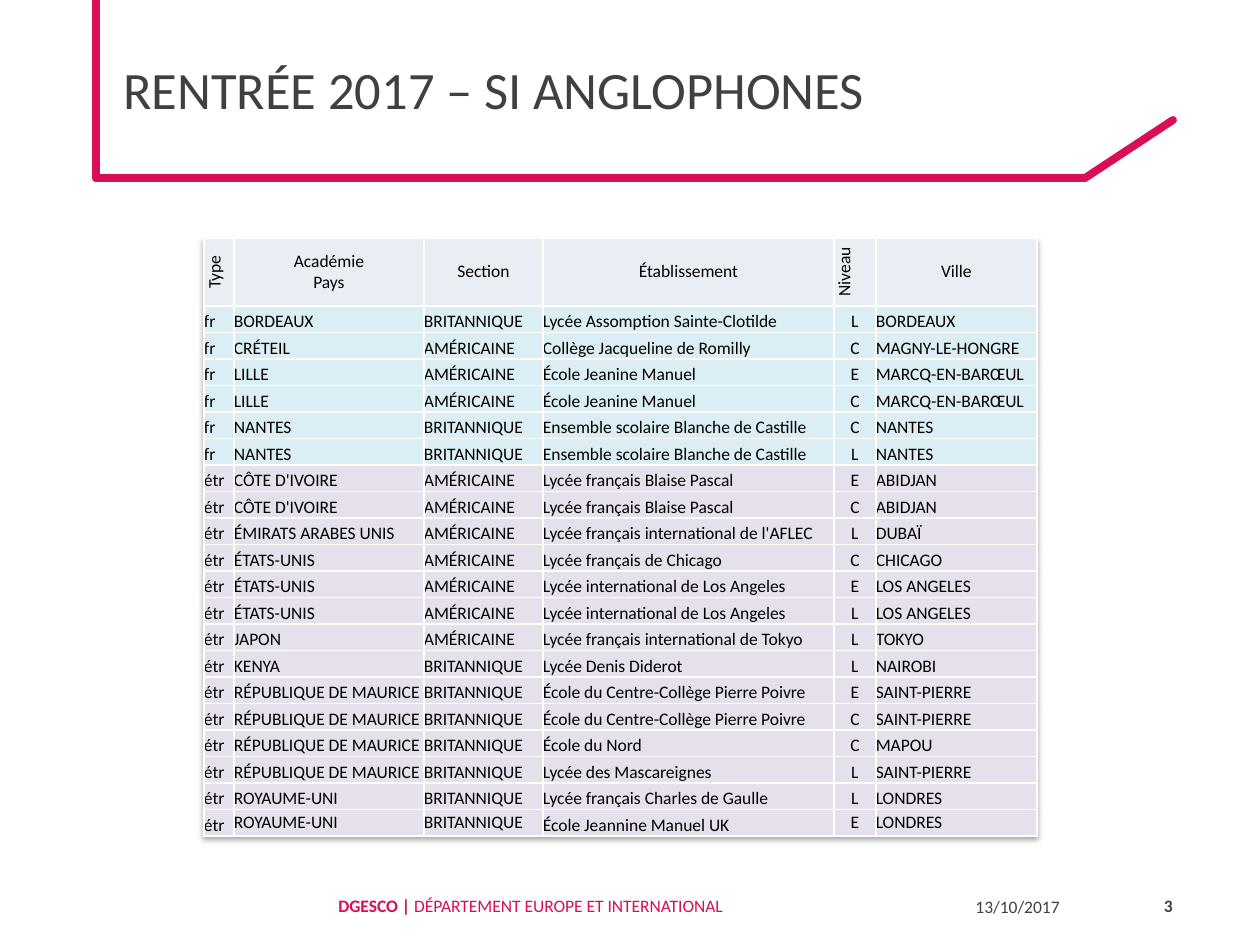
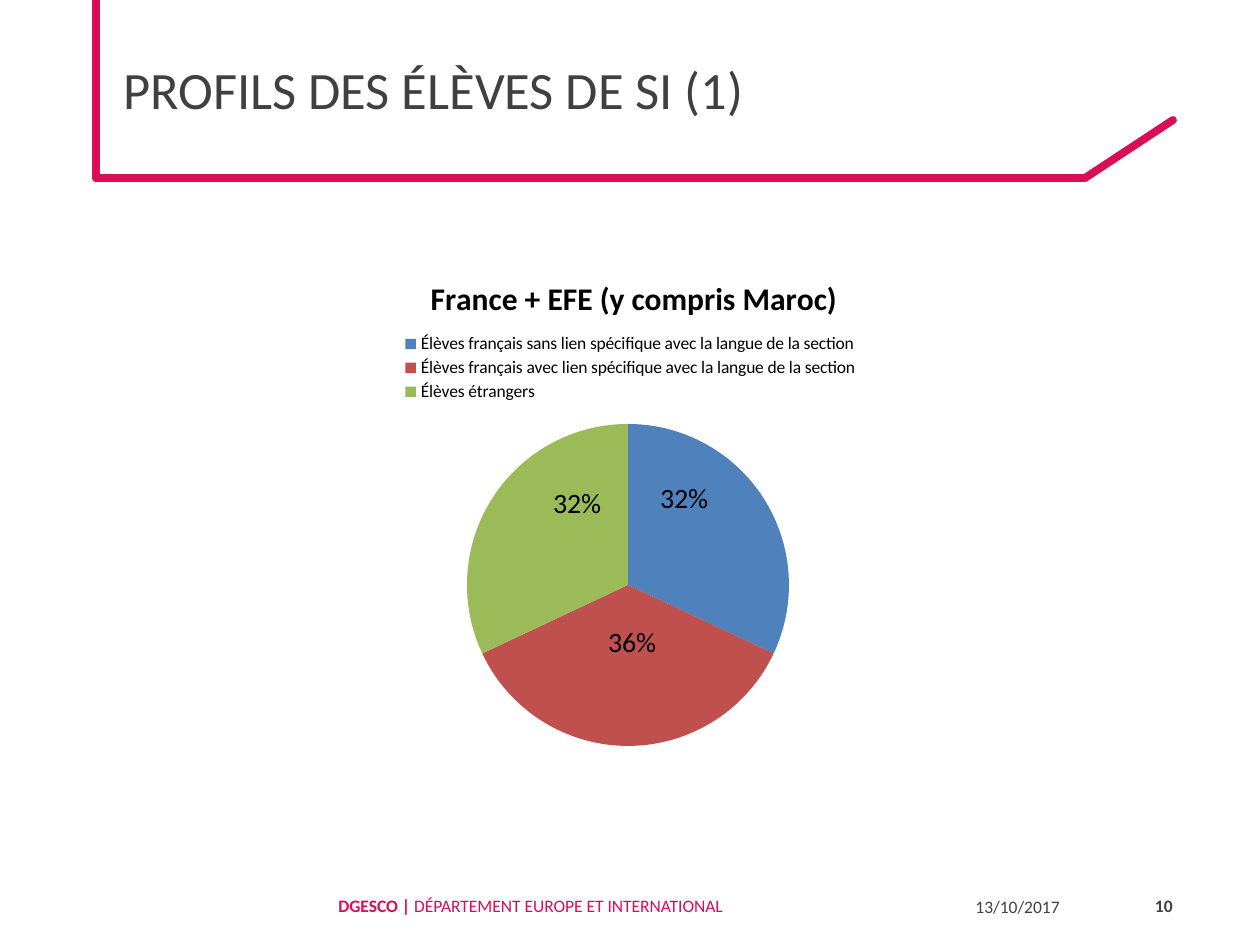
"""Builds two slides on international sections: a table of schools and a pie of pupil profiles."""
from lxml import etree
from pptx import Presentation, util as u
from pptx.chart.data import CategoryChartData
from pptx.dml.color import RGBColor
from pptx.enum import chart as charts, shapes, text
from pptx.oxml import parse_xml
from pptx.oxml.ns import nsdecls, qn

PINK = RGBColor(0xDA, 0x0D, 0x57)
GREY = RGBColor(0x40, 0x40, 0x40)
BLACK = RGBColor(0, 0, 0)
HEADER_FILL = RGBColor(0xE9, 0xED, 0xF4)
TYPE_FILLS = {"fr": RGBColor(0xDB, 0xEE, 0xF4), "étr": RGBColor(0xE6, 0xE0, 0xEC)}
BLUE = RGBColor(0x4F, 0x81, 0xBD)
RED = RGBColor(0xC0, 0x50, 0x4D)
GREEN = RGBColor(0x9B, 0xBB, 0x59)
FONT = "Calibri"
MIDDLE, BOTTOM = text.MSO_ANCHOR.MIDDLE, text.MSO_ANCHOR.BOTTOM
LEFT, CENTER, RIGHT = text.PP_ALIGN.LEFT, text.PP_ALIGN.CENTER, text.PP_ALIGN.RIGHT

FRAME_LINES = [(96, 178, 1085, 178), (1085, 178, 1173, 120), (96, 178, 96, 0)]
DEPARTMENT = ("DGESCO | ", "DÉPARTEMENT EUROPE ET INTERNATIONAL")
DATE = "13/10/2017"
TITLE_BOX = (111, 0, 1086, 178)
DEPARTMENT_BOX = (326, 858, 636, 93)
DATE_BOX = (963, 881, 160, 50)
NUMBER_BOX = (1123, 881, 62, 50)

COLUMNS = [("Type", 30), ("Académie\nPays", 190), ("Section", 119),
           ("Établissement", 291), ("Niveau", 42), ("Ville", 161)]
UPRIGHT = {"Type", "Niveau"}
UK, US = "BRITANNIQUE", "AMÉRICAINE"
SCHOOLS = [
    ("fr", "BORDEAUX", UK, "Lycée Assomption Sainte-Clotilde", "L", "BORDEAUX"),
    ("fr", "CRÉTEIL", US, "Collège Jacqueline de Romilly", "C", "MAGNY-LE-HONGRE"),
    ("fr", "LILLE", US, "École Jeanine Manuel", "E", "MARCQ-EN-BARŒUL"),
    ("fr", "LILLE", US, "École Jeanine Manuel", "C", "MARCQ-EN-BARŒUL"),
    ("fr", "NANTES", UK, "Ensemble scolaire Blanche de Castille", "C", "NANTES"),
    ("fr", "NANTES", UK, "Ensemble scolaire Blanche de Castille", "L", "NANTES"),
    ("étr", "CÔTE D'IVOIRE", US, "Lycée français Blaise Pascal", "E", "ABIDJAN"),
    ("étr", "CÔTE D'IVOIRE", US, "Lycée français Blaise Pascal", "C", "ABIDJAN"),
    ("étr", "ÉMIRATS ARABES UNIS", US, "Lycée français international de l'AFLEC", "L", "DUBAÏ"),
    ("étr", "ÉTATS-UNIS", US, "Lycée français de Chicago", "C", "CHICAGO"),
    ("étr", "ÉTATS-UNIS", US, "Lycée international de Los Angeles", "E", "LOS ANGELES"),
    ("étr", "ÉTATS-UNIS", US, "Lycée international de Los Angeles", "L", "LOS ANGELES"),
    ("étr", "JAPON", US, "Lycée français international de Tokyo", "L", "TOKYO"),
    ("étr", "KENYA", UK, "Lycée Denis Diderot", "L", "NAIROBI"),
    ("étr", "RÉPUBLIQUE DE MAURICE", UK, "École du Centre-Collège Pierre Poivre", "E", "SAINT-PIERRE"),
    ("étr", "RÉPUBLIQUE DE MAURICE", UK, "École du Centre-Collège Pierre Poivre", "C", "SAINT-PIERRE"),
    ("étr", "RÉPUBLIQUE DE MAURICE", UK, "École du Nord", "C", "MAPOU"),
    ("étr", "RÉPUBLIQUE DE MAURICE", UK, "Lycée des Mascareignes", "L", "SAINT-PIERRE"),
    ("étr", "ROYAUME-UNI", UK, "Lycée français Charles de Gaulle", "L", "LONDRES"),
    ("étr", "ROYAUME-UNI", UK, "École Jeannine Manuel UK", "E", "LONDRES"),
]
SCHOOLS_AT = (204, 238)
HEADER_HEIGHT, BODY_HEIGHT = 68, 530

PROFILES_TITLE = "France + EFE (y compris Maroc)"
PROFILES = [
    ("Élèves français sans lien spécifique avec la langue de la section", 32, BLUE, (-12, -43)),
    ("Élèves français avec lien spécifique avec la langue de la section", 36, RED, (4, -22)),
    ("Élèves étrangers", 32, GREEN, (17, -37)),
]
PROFILES_BOX = (204, 244, 849, 561)
PIE_BOX = (263, 180, 322, 322)
LEGEND_BOX = (195, 86, 462, 76)
PROFILES_TITLE_AT = (221, 27)


def px(length):
    return round(length * 914400 / 126)


def write(paragraph, content, size=10, color=BLACK, bold=False, align=LEFT, spacing=None):
    paragraph.alignment = align
    if spacing:
        paragraph.line_spacing = u.Pt(spacing)
    for index, line in enumerate(content.split("\n")):
        if index:
            paragraph.add_line_break()
        run = paragraph.add_run()
        run.text = line
        run.font.name, run.font.size, run.font.bold = FONT, u.Pt(size), bold
        run.font.color.rgb = color


def add_box(slide, box):
    frame = slide.shapes.add_textbox(*map(px, box)).text_frame
    frame.word_wrap = True
    frame.vertical_anchor = MIDDLE
    return frame.paragraphs[0]


def add_page(deck, title, number):
    slide = deck.slides.add_slide(deck.slide_layouts[6])
    for ends in FRAME_LINES:
        line = slide.shapes.add_connector(shapes.MSO_CONNECTOR.STRAIGHT, *map(px, ends))
        line.line.color.rgb = PINK
        line.line.width = u.Pt(4.5)
        properties = line.element.xpath("p:spPr")[0]
        properties.find(qn("a:ln")).set("cap", "rnd")
        etree.SubElement(properties, qn("a:effectLst"))
    department = add_box(slide, DEPARTMENT_BOX)
    for part, bold in zip(DEPARTMENT, (True, False)):
        write(department, part, color=PINK, bold=bold, spacing=13.2)
    write(add_box(slide, DATE_BOX), DATE, color=GREY, spacing=13.2)
    write(add_box(slide, TITLE_BOX), title, size=30, color=GREY)
    write(add_box(slide, NUMBER_BOX), str(number), color=GREY, bold=True, align=RIGHT)
    return slide


def fill_cell(cell, content, fill, anchor, align, upright=False):
    properties = cell._tc.get_or_add_tcPr()
    for side in ("lnL", "lnR", "lnT", "lnB"):
        properties.append(parse_xml(
            f'<a:{side} {nsdecls("a")} w="12700"><a:solidFill>'
            f'<a:srgbClr val="FFFFFF"/></a:solidFill></a:{side}>'))
    if upright:
        properties.set("vert", "vert270")
    cell.fill.solid()
    cell.fill.fore_color.rgb = fill
    cell.margin_left = cell.margin_right = cell.margin_top = cell.margin_bottom = 0
    cell.vertical_anchor = anchor
    write(cell.text_frame.paragraphs[0], content, align=align)


def add_schools(slide):
    width = sum(column_width for _, column_width in COLUMNS)
    holder = slide.shapes.add_table(
        len(SCHOOLS) + 1, len(COLUMNS),
        *map(px, (*SCHOOLS_AT, width, HEADER_HEIGHT + BODY_HEIGHT)))
    table = holder.table
    table.first_row = table.horz_banding = False
    holder.element.xpath(".//a:tblPr")[0].insert(0, parse_xml(
        f'<a:effectLst {nsdecls("a")}><a:outerShdw blurRad="40000" dist="23000" dir="5400000" '
        'rotWithShape="0"><a:srgbClr val="000000"><a:alpha val="35000"/></a:srgbClr>'
        '</a:outerShdw></a:effectLst>'))
    for row in table.rows:
        row.height = px(BODY_HEIGHT / len(SCHOOLS))
    table.rows[0].height = px(HEADER_HEIGHT)
    for column, (heading, column_width) in enumerate(COLUMNS):
        table.columns[column].width = px(column_width)
        fill_cell(table.cell(0, column), heading, HEADER_FILL, MIDDLE, CENTER, heading in UPRIGHT)
        for row, school in enumerate(SCHOOLS, 1):
            raised = row == len(SCHOOLS) and heading not in ("Type", "Établissement")
            fill_cell(table.cell(row, column), school[column], TYPE_FILLS[school[0]],
                      MIDDLE if raised else BOTTOM, CENTER if heading == "Niveau" else LEFT)


def layout(box, inner=False, mode="edge"):
    sizes = (*PROFILES_BOX[2:], *PROFILES_BOX[2:])
    parts = '<c:layoutTarget val="inner"/>' if inner else ""
    if mode == "edge":
        parts += '<c:xMode val="edge"/><c:yMode val="edge"/>'
    for key, length, whole in zip("xywh", box, sizes):
        parts += f'<c:{key} val="{length / whole:.4f}"/>'
    return f'<c:layout {nsdecls("c")}><c:manualLayout>{parts}</c:manualLayout></c:layout>'


def place(part, after, box):
    for old in part.findall(qn("c:layout")):
        part.remove(old)
    part.find(qn(after)).addnext(parse_xml(layout(box)))


def add_profiles(slide):
    data = CategoryChartData()
    data.categories = [name for name, *_ in PROFILES]
    data.add_series("Series 1", [share for _, share, *_ in PROFILES])
    chart = slide.shapes.add_chart(
        charts.XL_CHART_TYPE.PIE, *map(px, PROFILES_BOX), data).chart
    chart.font.name, chart.font.size = FONT, u.Pt(10)
    chart.font.color.rgb = BLACK
    chart.has_title = True
    write(chart.chart_title.text_frame.paragraphs[0], PROFILES_TITLE,
          size=18, bold=True, align=CENTER)
    chart.has_legend = True
    chart.legend.position = charts.XL_LEGEND_POSITION.TOP
    chart.legend.include_in_layout = False
    pie = chart.plots[0]
    pie.vary_by_categories = True
    labels = pie.series[0].data_labels
    labels.show_percentage, labels.show_value = True, False
    labels.number_format, labels.number_format_is_linked = "0%", False
    labels.position = charts.XL_LABEL_POSITION.CENTER
    labels.font.name, labels.font.size = FONT, u.Pt(16)
    labels.font.color.rgb = BLACK
    label_list = chart.element.xpath(".//c:ser/c:dLbls")[0]
    label_style = etree.tostring(label_list.find(qn("c:txPr")), encoding="unicode")
    for index, (_, _, color, shift) in enumerate(PROFILES):
        wedge = pie.series[0].points[index].format.fill
        wedge.solid()
        wedge.fore_color.rgb = color
        label_list.insert(index, parse_xml(
            f'<c:dLbl {nsdecls("c")}><c:idx val="{index}"/>{layout(shift, mode="factor")}'
            f'<c:numFmt formatCode="0%" sourceLinked="0"/>{label_style}<c:dLblPos val="ctr"/>'
            '<c:showLegendKey val="0"/><c:showVal val="0"/><c:showCatName val="0"/>'
            '<c:showSerName val="0"/><c:showPercent val="1"/><c:showBubbleSize val="0"/></c:dLbl>'))
    body = chart.element.find(qn("c:chart"))
    place(body.find(qn("c:title")), "c:tx", PROFILES_TITLE_AT)
    place(body.find(qn("c:legend")), "c:legendPos", LEGEND_BOX)
    plot_area = body.find(qn("c:plotArea"))
    for old in plot_area.findall(qn("c:layout")):
        plot_area.remove(old)
    plot_area.insert(0, parse_xml(layout(PIE_BOX, inner=True)))


def main():
    deck = Presentation()
    deck.slide_width, deck.slide_height = px(1260), px(945)
    add_schools(add_page(deck, "RENTRÉE 2017 – SI ANGLOPHONES", 3))
    add_profiles(add_page(deck, "PROFILS DES ÉLÈVES DE SI (1)", 10))
    deck.save("out.pptx")


if __name__ == "__main__":
    main()
